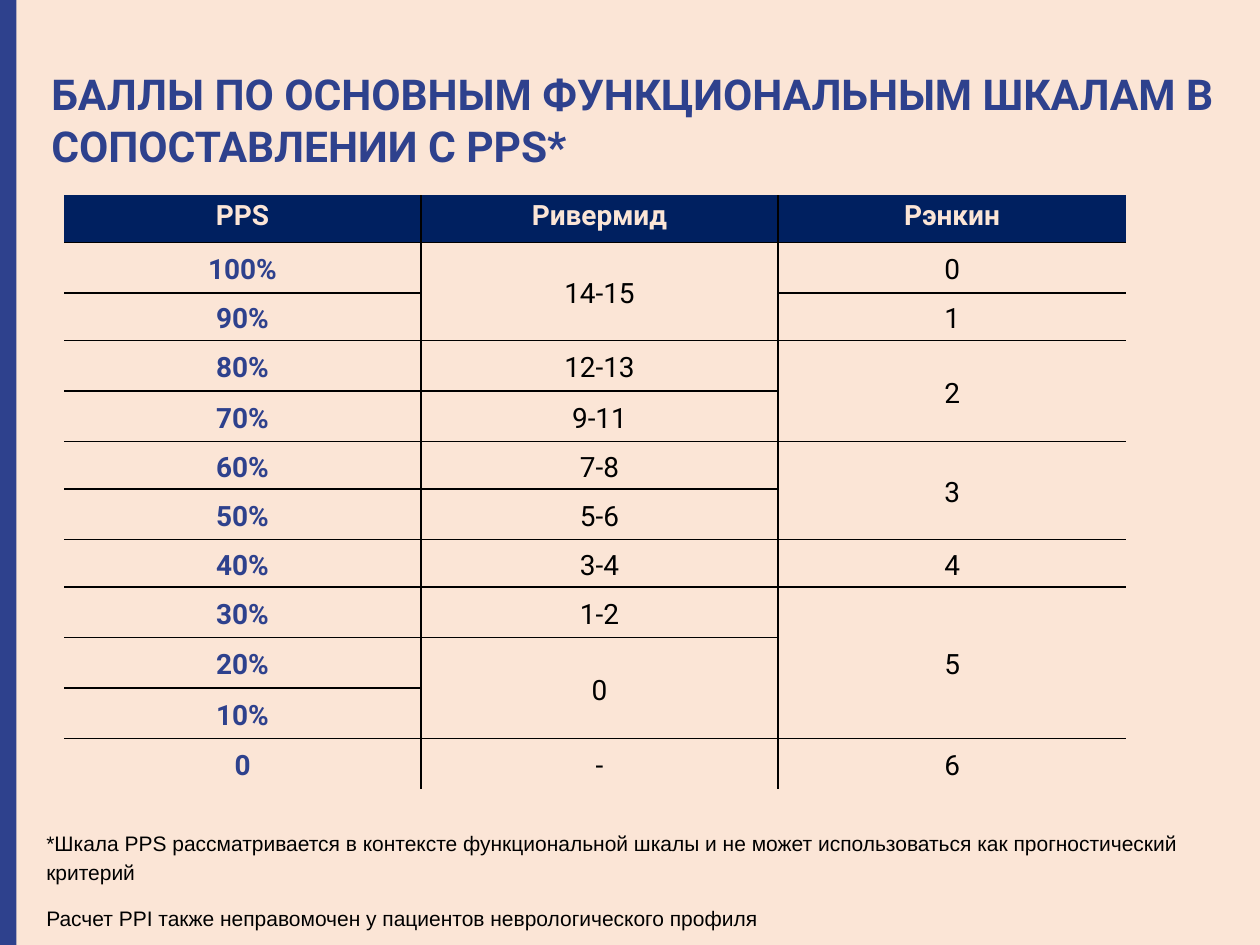
from lxml import etree
from pptx import Presentation
from pptx.dml.color import RGBColor
from pptx.enum import shapes, text
from pptx.oxml import ns
from pptx.util import Pt

BLUE = RGBColor(0x2E, 0x41, 0x8D)
NAVY = RGBColor(0x00, 0x20, 0x60)
CREAM = RGBColor(0xFB, 0xE5, 0xD6)
BLACK = RGBColor(0, 0, 0)
NO_STYLE = "{2D5ABB26-0587-4C30-8999-92F81FD0307C}"


def write(frame, *lines, size, color, font="Roboto", bold=False, align=None, spacing=1.15, after=0):
    frame.word_wrap = True
    for index, line in enumerate(lines):
        paragraph = frame.add_paragraph() if index else frame.paragraphs[0]
        paragraph.alignment = align
        paragraph.line_spacing = spacing
        paragraph.space_after = Pt(after)
        run = paragraph.add_run()
        run.text = line
        run.font.name = font
        run.font.size = Pt(size)
        run.font.bold = bold
        run.font.color.rgb = color


def add_border(cell, side):
    line = etree.SubElement(cell._tc.get_or_add_tcPr(), ns.qn(f"a:ln{side}"), w=str(Pt(1)))
    fill = etree.SubElement(line, ns.qn("a:solidFill"))
    etree.SubElement(fill, ns.qn("a:srgbClr"), val=str(BLACK))


presentation = Presentation()
presentation.slide_width = Pt(720)
presentation.slide_height = Pt(540)
slide = presentation.slides.add_slide(presentation.slide_layouts[6])
slide.background.fill.solid()
slide.background.fill.fore_color.rgb = CREAM

side_bar = slide.shapes.add_shape(shapes.MSO_SHAPE.RECTANGLE, 0, 0, Pt(9.4), Pt(540))
side_bar.shadow.inherit = False
side_bar.fill.solid()
side_bar.fill.fore_color.rgb = BLUE
side_bar.line.fill.background()

title = slide.shapes.add_textbox(Pt(22.3), Pt(37.4), Pt(693.4), Pt(90))
title.text_frame.margin_top = Pt(1.5)
write(
    title.text_frame,
    "БАЛЛЫ ПО ОСНОВНЫМ ФУНКЦИОНАЛЬНЫМ ШКАЛАМ В СОПОСТАВЛЕНИИ С PPS*",
    size=24.3, color=BLUE, bold=True, spacing=Pt(29.3),
)

scores = [
    ("PPS", "Ривермид", "Рэнкин"),
    ("100%", "14-15", "0"),
    ("90%", None, "1"),
    ("80%", "12-13", "2"),
    ("70%", "9-11", None),
    ("60%", "7-8", "3"),
    ("50%", "5-6", None),
    ("40%", "3-4", "4"),
    ("30%", "1-2", "5"),
    ("20%", "0", None),
    ("10%", None, None),
    ("0", "-", "6"),
]
column_widths = [204, 204, 199]
short_rows = {0, 2, 5, 7}
last_row, last_column = len(scores) - 1, len(column_widths) - 1

frame = slide.shapes.add_table(len(scores), len(column_widths), Pt(36.6), Pt(111.5), Pt(607), Pt(339.6))
table = frame.table
table.first_row = False
table.horz_banding = False
table._tbl.tblPr.find(ns.qn("a:tableStyleId")).text = NO_STYLE
for column, width in zip(table.columns, column_widths):
    column.width = Pt(width)

for row, values in enumerate(scores):
    table.rows[row].height = Pt(27.1 if row in short_rows else 28.9)
    for column, value in enumerate(values):
        cell = table.cell(row, column)
        cell.margin_left = cell.margin_right = Pt(5)
        cell.margin_top = cell.margin_bottom = 0
        edges = [("L", column > 0), ("R", column < last_column), ("T", row > 0), ("B", row < last_row)]
        for side, inner in edges:
            if inner:
                add_border(cell, side)
        if row == 0:
            cell.fill.solid()
            cell.fill.fore_color.rgb = NAVY
            color = CREAM
        else:
            cell.fill.background()
            cell.vertical_anchor = text.MSO_ANCHOR.MIDDLE
            color = BLACK if column else BLUE
        if value is None:
            continue
        write(
            cell.text_frame, value, size=16, color=color,
            bold=row == 0 or column == 0, align=text.PP_ALIGN.CENTER,
        )
        end = row
        while end < last_row and scores[end + 1][column] is None:
            end += 1
        if end > row:
            cell.merge(table.cell(end, column))

footnote = slide.shapes.add_textbox(Pt(19.4), Pt(468.7), Pt(674.6), Pt(67.7))
write(
    footnote.text_frame,
    "*Шкала PPS рассматривается в контексте функциональной шкалы и не может использоваться как прогностический критерий",
    "Расчет PPI также неправомочен у пациентов неврологического профиля",
    size=12, color=BLACK, font="Arial", after=10,
)

presentation.save("out.pptx")
